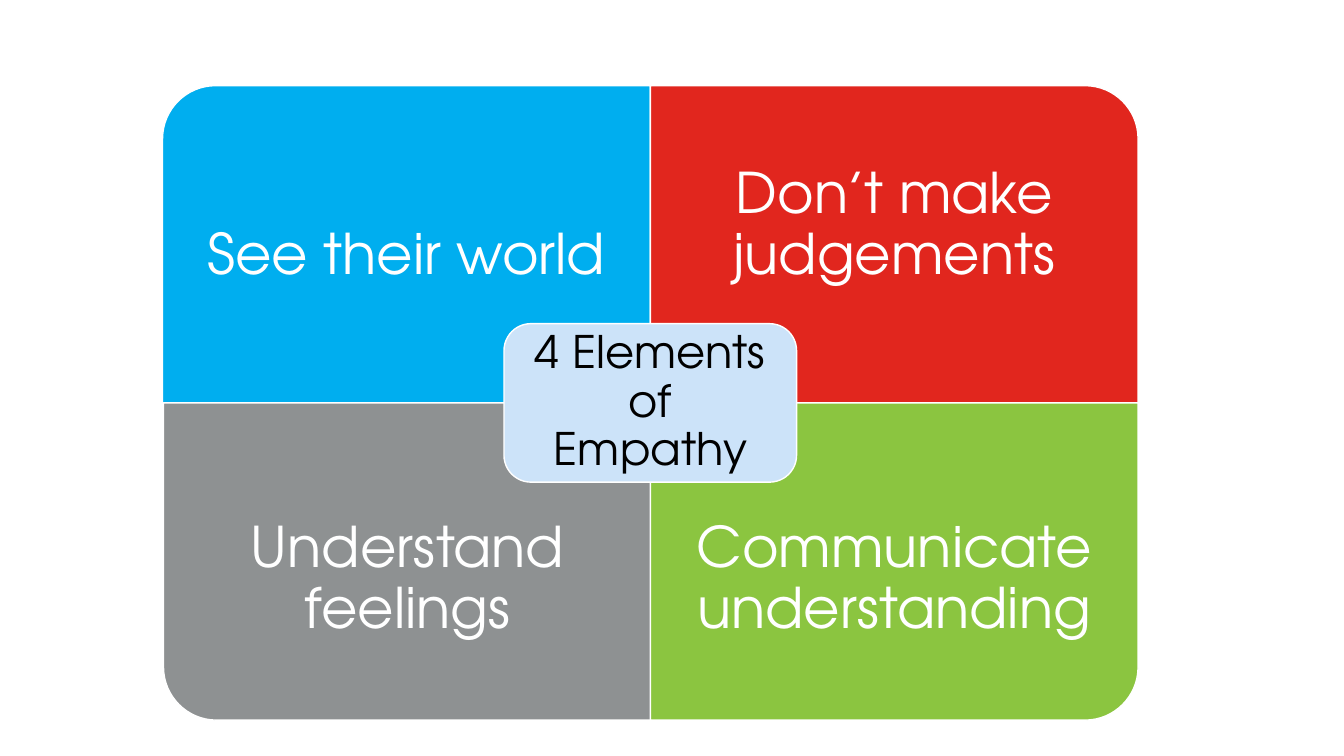
from lxml import etree
from pptx import Presentation
from pptx.dml.color import RGBColor
from pptx.enum.shapes import MSO_SHAPE as Preset
from pptx.enum.text import MSO_ANCHOR as Anchor, PP_ALIGN as Align
from pptx.oxml.ns import qn
from pptx.util import Pt

FONT = "TeX Gyre Adventor"
WHITE = RGBColor(0xFF, 0xFF, 0xFF)
BLACK = RGBColor(0x00, 0x00, 0x00)
BLUE = RGBColor(0x00, 0xAE, 0xEF)
RED = RGBColor(0xE1, 0x26, 0x1E)
GRAY = RGBColor(0x8E, 0x91, 0x92)
GREEN = RGBColor(0x8B, 0xC5, 0x40)
PALE_BLUE = RGBColor(0xCC, 0xE3, 0xF9)

CENTER_X, CENTER_Y = 464.5, 287.8
QUADRANT_WIDTH, QUADRANT_HEIGHT = 348.4, 226.6
CORNER_RADIUS = 37.8
CONTROL_GAP = 0.45 * CORNER_RADIUS
LABEL_WIDTH, LABEL_HEIGHT = 209, 113.2


def style_shape(shape, text, fill, color, size, anchor, insets):
    """Format a shape and its text; insets are left, top, right, bottom."""
    shape.shadow.inherit = False
    shape.fill.solid()
    shape.fill.fore_color.rgb = fill
    shape.line.color.rgb = WHITE
    shape.line.width = Pt(1)
    frame = shape.text_frame
    frame.text = text
    frame.word_wrap = True
    frame.vertical_anchor = anchor
    (frame.margin_left, frame.margin_top,
     frame.margin_right, frame.margin_bottom) = [Pt(inset) for inset in insets]
    para = frame.paragraphs[0]
    para.alignment = Align.CENTER
    para.line_spacing = 0.9
    font = para.runs[0].font
    font.name = FONT
    font.size = Pt(size)
    font.color.rgb = color


def round_corner(shape):
    """Turn the second to fourth line segments after the first into one curve."""
    lines = list(shape._element.iter(qn("a:lnTo")))
    curve = etree.Element(qn("a:cubicBezTo"))
    lines[1].addnext(curve)
    for line in lines[2:5]:
        curve.append(line[0])
        line.getparent().remove(line)


deck = Presentation()
deck.slide_width, deck.slide_height = Pt(960), Pt(540)
slide = deck.slides.add_slide(deck.slide_layouts[6])

# Quadrants: text, fill, horizontal and vertical direction, shift to the right
quadrants = [
    ("See their world", BLUE, -1, -1, 0),
    ("Don’t make judgements", RED, 1, -1, 0),
    ("Understand feelings", GRAY, -1, 1, 0.7),
    ("Communicate understanding", GREEN, 1, 1, 0),
]
for text, fill, side_x, side_y, shift in quadrants:
    inner_x = CENTER_X + shift
    outer_x = inner_x + side_x * QUADRANT_WIDTH
    outer_y = CENTER_Y + side_y * QUADRANT_HEIGHT
    points = [
        (outer_x, CENTER_Y),
        (outer_x, outer_y - side_y * CORNER_RADIUS),
        (outer_x, outer_y - side_y * CONTROL_GAP),
        (outer_x - side_x * CONTROL_GAP, outer_y),
        (outer_x - side_x * CORNER_RADIUS, outer_y),
        (inner_x, outer_y),
    ]
    builder = slide.shapes.build_freeform(Pt(inner_x), Pt(CENTER_Y))
    builder.add_line_segments([(Pt(x), Pt(y)) for x, y in points], close=True)
    quadrant = builder.convert_to_shape()
    round_corner(quadrant)
    if side_y < 0:
        anchor, insets = Anchor.BOTTOM, (22.4, 22.4, 22.4, 83.1)
    else:
        anchor, insets = Anchor.TOP, (22.4, 83.1, 22.4, 22.4)
    style_shape(quadrant, text, fill, WHITE, 40, anchor, insets)

# Center label
label = slide.shapes.add_shape(
    Preset.ROUNDED_RECTANGLE,
    Pt(CENTER_X - LABEL_WIDTH / 2), Pt(CENTER_Y - LABEL_HEIGHT / 2),
    Pt(LABEL_WIDTH), Pt(LABEL_HEIGHT))
label.adjustments[0] = 0.17
style_shape(label, "4 Elements of Empathy", PALE_BLUE, BLACK, 32,
            Anchor.MIDDLE, (10.3,) * 4)

deck.save("out.pptx")
